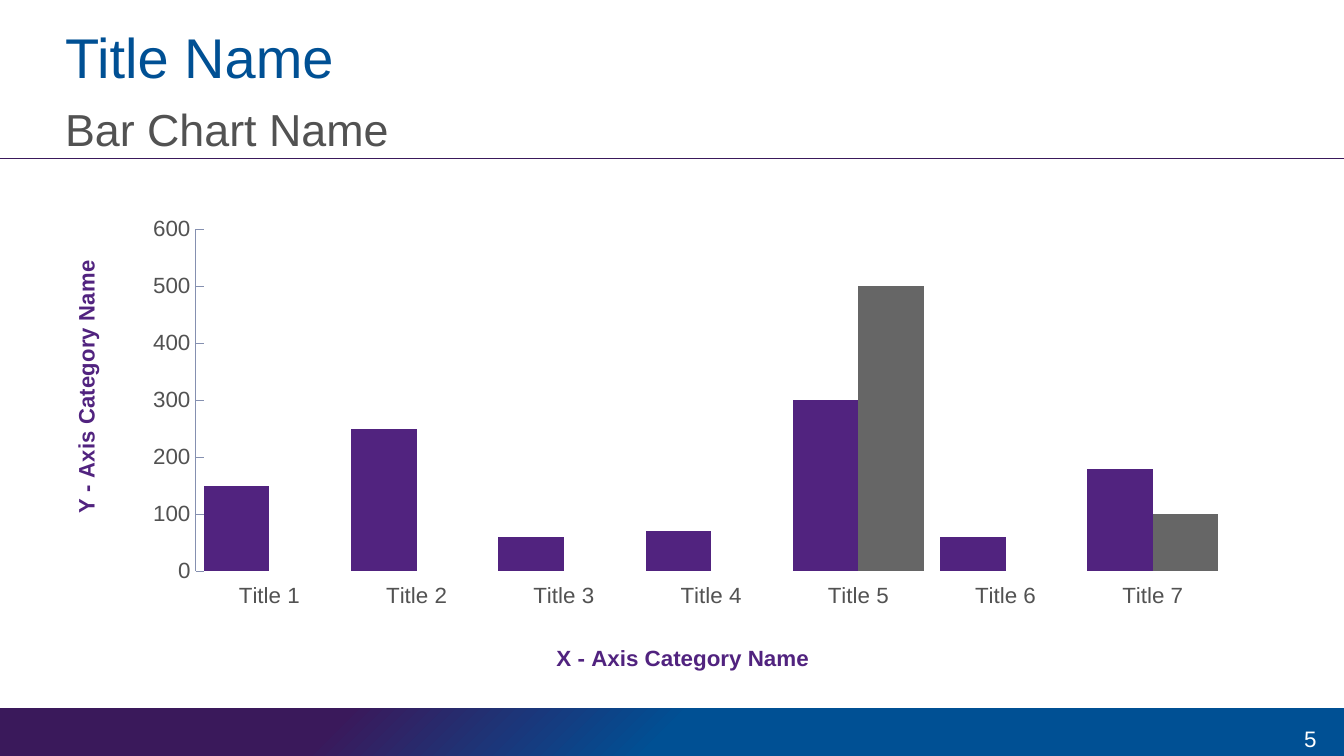
"""Build a title slide with a clustered column chart and a gradient footer."""
from lxml import etree
from pptx import Presentation
from pptx.chart.data import CategoryChartData
from pptx.dml.color import RGBColor
from pptx.enum.chart import XL_CHART_TYPE, XL_TICK_MARK
from pptx.enum.shapes import MSO_CONNECTOR, MSO_SHAPE
from pptx.enum.text import MSO_ANCHOR, PP_ALIGN
from pptx.oxml import parse_xml
from pptx.oxml.ns import nsdecls, qn
from pptx.util import Cm, Pt

COLUMNS = XL_CHART_TYPE.COLUMN_CLUSTERED
TICK_IN, TICK_OUT, TICK_NONE = XL_TICK_MARK.INSIDE, XL_TICK_MARK.OUTSIDE, XL_TICK_MARK.NONE
STRAIGHT, RECTANGLE = MSO_CONNECTOR.STRAIGHT, MSO_SHAPE.RECTANGLE
TOP, MIDDLE = MSO_ANCHOR.TOP, MSO_ANCHOR.MIDDLE
LEFT, RIGHT = PP_ALIGN.LEFT, PP_ALIGN.RIGHT

TITLE = "Title Name"
SUBTITLE = "Bar Chart Name"
PAGE_NUMBER = "5"
X_TITLE = "X - Axis Category Name"
Y_TITLE = "Y - Axis Category Name"
CATEGORIES = [f"Title {number}" for number in range(1, 8)]
SERIES = [
    ("Series 1", (150, 250, 60, 70, 300, 60, 180), "purple"),
    ("Series 2", (None, None, None, None, 500, None, 100), "grey"),
]

THEME = {
    "font": "Arial",
    "colors": {"blue": "005094", "dark": "3A195B", "purple": "51237F", "grey": "666666",
               "text": "525252", "axis": "8590B0", "white": "FFFFFF"},
    "sizes": {"title": 30, "subtitle": 24, "small": 12},
}
FOOTER_STOPS = [(0, "blue"), (50, "blue"), (75, "dark")]

WIDTH, HEIGHT = 25.4, 14.29
MARGIN, TEXT_WIDTH = 1.23, 23.19
FOOTER_HEIGHT = 0.9
RULE_TOP = 3
CHART_WIDTH, CHART_HEIGHT = 23.19, 9.25


def color(name):
    return RGBColor.from_string(THEME["colors"][name])


def style_font(font, size, color_name, bold=False):
    font.name = THEME["font"]
    font.size = Pt(THEME["sizes"][size])
    font.bold = bold
    font.color.rgb = color(color_name)


def place(shape, *box):
    shape.left, shape.top, shape.width, shape.height = map(Cm, box)


def write(shape, text, size, color_name, anchor, align=LEFT, insets=(0, 0, 0, 0)):
    frame = shape.text_frame
    frame.word_wrap = True
    frame.vertical_anchor = anchor
    (frame.margin_left, frame.margin_top,
     frame.margin_right, frame.margin_bottom) = map(Cm, insets)
    paragraph = frame.paragraphs[0]
    paragraph.alignment = align
    paragraph.space_before = Pt(0)
    run = paragraph.add_run()
    run.text = text
    style_font(run.font, size, color_name)


def add_footer(slide):
    footer = slide.shapes.add_shape(
        RECTANGLE, 0, Cm(HEIGHT - FOOTER_HEIGHT), Cm(WIDTH), Cm(FOOTER_HEIGHT))
    footer.shadow.inherit = False
    footer.line.fill.background()
    stops = "".join(
        f'<a:gs pos="{position * 1000}"><a:srgbClr val="{THEME["colors"][name]}"/></a:gs>'
        for position, name in FOOTER_STOPS)
    gradient = parse_xml(
        f'<a:gradFill {nsdecls("a")} rotWithShape="1"><a:gsLst>{stops}</a:gsLst>'
        '<a:path path="circle"><a:fillToRect l="100000" t="100000"/></a:path></a:gradFill>')
    footer.element.spPr.find(qn("a:prstGeom")).addnext(gradient)


def add_rule(slide):
    rule = slide.shapes.add_connector(STRAIGHT, 0, Cm(RULE_TOP), Cm(WIDTH), Cm(RULE_TOP))
    rule.line.color.rgb = color("dark")
    rule.line.width = Pt(0.75)
    etree.SubElement(rule.element.spPr, qn("a:effectLst"))


def set_layout(parent, index, left, top, width=None, height=None):
    for existing in parent.findall(qn("c:layout")):
        parent.remove(existing)
    values = {"xMode": "edge", "yMode": "edge",
              "x": left / CHART_WIDTH, "y": top / CHART_HEIGHT}
    if width:
        values = {"layoutTarget": "inner", **values,
                  "w": width / CHART_WIDTH, "h": height / CHART_HEIGHT}
    fields = "".join(f'<c:{tag} val="{value}"/>' for tag, value in values.items())
    parent.insert(index, parse_xml(
        f'<c:layout {nsdecls("c")}><c:manualLayout>{fields}</c:manualLayout></c:layout>'))


def add_axis_title(chart, axis, tag, text, left, top, rotation):
    run = axis.axis_title.text_frame.paragraphs[0].add_run()
    run.text = text
    style_font(run.font, "small", "purple", bold=True)
    title = chart.element.xpath(f".//c:{tag}/c:title")[0]
    title.find(".//" + qn("a:bodyPr")).set("rot", str(rotation * 60000))
    set_layout(title, 1, left, top)


def add_column_chart(slide):
    data = CategoryChartData()
    data.categories = CATEGORIES
    for name, values, _ in SERIES:
        data.add_series(name, values)
    chart = slide.shapes.add_chart(
        COLUMNS, Cm(1.02), Cm(3.56), Cm(CHART_WIDTH), Cm(CHART_HEIGHT), data).chart
    chart.has_legend = False
    chart.has_title = False
    style_font(chart.font, "small", "text")
    plot = chart.plots[0]
    plot.vary_by_categories = False
    plot.gap_width = 25
    plot.overlap = 0
    for series, (_, _, color_name) in zip(plot.series, SERIES):
        series.format.fill.solid()
        series.format.fill.fore_color.rgb = color(color_name)

    category_axis, value_axis = chart.category_axis, chart.value_axis
    category_axis.major_tick_mark = TICK_OUT
    category_axis.format.line.fill.background()
    value_axis.major_tick_mark = TICK_IN
    value_axis.format.line.color.rgb = color("axis")
    value_axis.minimum_scale, value_axis.maximum_scale, value_axis.major_unit = 0, 600, 100
    for axis in (category_axis, value_axis):
        axis.has_major_gridlines = False
        axis.minor_tick_mark = TICK_NONE
    add_axis_title(chart, category_axis, "catAx", X_TITLE, 9.42, 8.7, 0)
    add_axis_title(chart, value_axis, "valAx", Y_TITLE, 0.27, 1.39, -90)
    set_layout(chart.element.xpath(".//c:plotArea")[0], 0, 2.68, 0.79, 19.48, 6.57)


def main():
    presentation = Presentation()
    presentation.slide_width, presentation.slide_height = Cm(WIDTH), Cm(HEIGHT)
    slide = presentation.slides.add_slide(presentation.slide_layouts[5])
    add_footer(slide)
    add_rule(slide)
    title = slide.shapes.title
    place(title, MARGIN, 0.41, TEXT_WIDTH, 1.42)
    write(title, TITLE, "title", "blue", MIDDLE, insets=(0, 0, 0, 0.13))
    subtitle = slide.shapes.add_textbox(Cm(MARGIN), Cm(1.92), Cm(TEXT_WIDTH), Cm(1.09))
    write(subtitle, SUBTITLE, "subtitle", "text", TOP)
    add_column_chart(slide)
    number = slide.shapes.add_textbox(Cm(23.71), Cm(13.51), Cm(1.42), Cm(FOOTER_HEIGHT))
    write(number, PAGE_NUMBER, "small", "white", MIDDLE, RIGHT, (0.25, 0.13, 0.25, 0.13))
    presentation.save("out.pptx")


if __name__ == "__main__":
    main()
